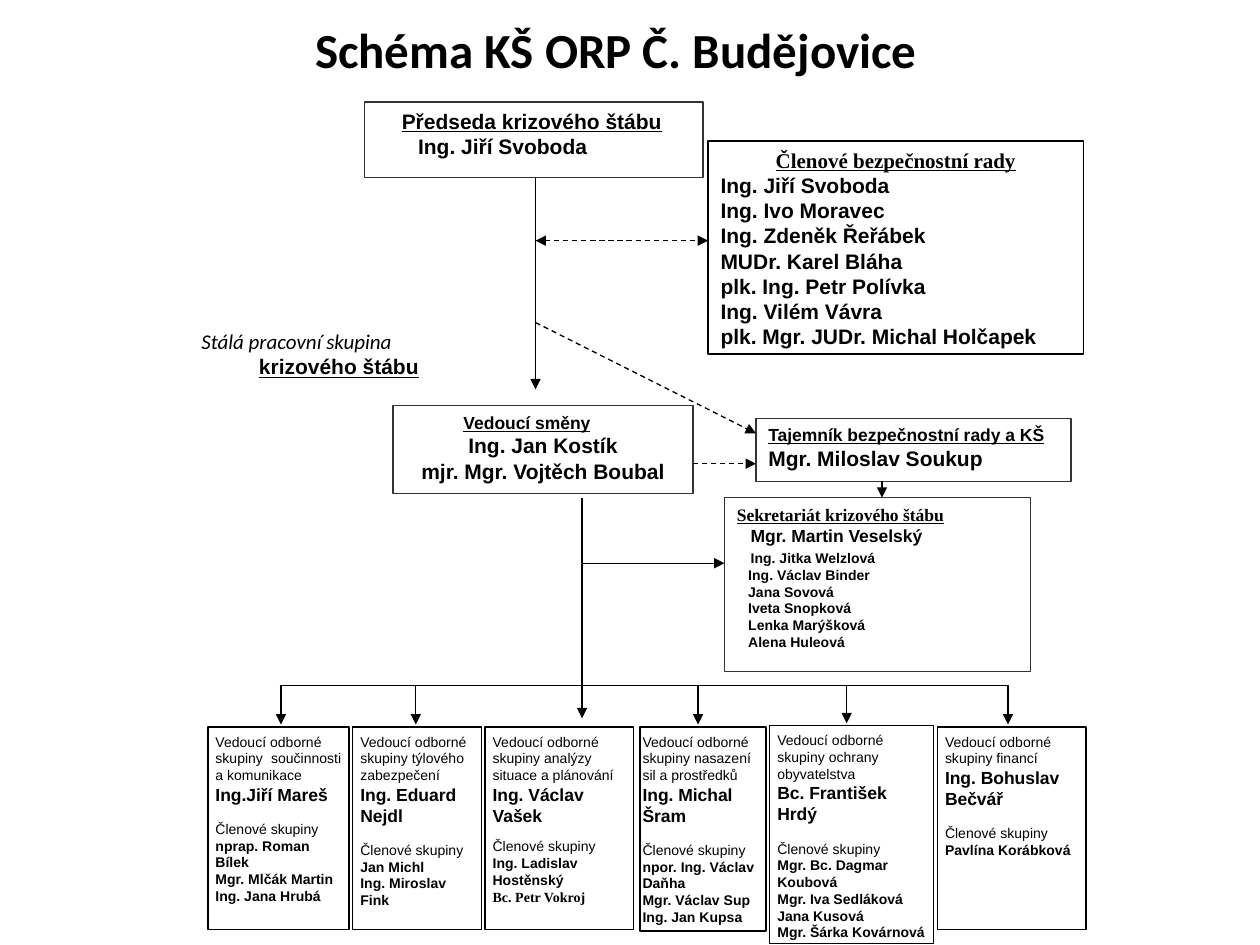
from dataclasses import dataclass

from lxml.etree import SubElement
from pptx import Presentation
from pptx.dml.color import RGBColor
from pptx.enum.dml import MSO_LINE
from pptx.enum.shapes import MSO_CONNECTOR, MSO_SHAPE
from pptx.enum.text import MSO_ANCHOR, MSO_AUTO_SIZE, PP_ALIGN
from pptx.oxml.ns import qn
from pptx.util import Inches, Pt

BLACK = RGBColor(0, 0, 0)
GRAY = RGBColor(0x33, 0x33, 0x33)
SERIF = "Times New Roman"
CENTER, JUSTIFY = PP_ALIGN.CENTER, PP_ALIGN.JUSTIFY


@dataclass
class Box:
    """Area in inches on the 10 x 7.5 slide."""
    left: float
    top: float
    width: float
    height: float

    @property
    def right(self):
        return self.left + self.width

    @property
    def bottom(self):
        return self.top + self.height

    @property
    def center(self):
        return self.left + self.width / 2

    def lengths(self):
        return [Inches(n) for n in (self.left, self.top, self.width, self.height)]


@dataclass
class Line:
    """One paragraph with its look."""
    text: str
    size: float = 12
    bold: bool = True
    underline: bool = False
    italic: bool = False
    font: str = "Arial"
    align: PP_ALIGN = PP_ALIGN.LEFT
    indent: float = 0
    before: float = 0


def write(frame, lines, side=0.1):
    frame.word_wrap = True
    frame.auto_size = MSO_AUTO_SIZE.NONE
    frame.vertical_anchor = MSO_ANCHOR.TOP
    frame.margin_left = frame.margin_right = Inches(side)
    frame.margin_top = frame.margin_bottom = Inches(0.05)
    for number, line in enumerate(lines):
        paragraph = frame.add_paragraph() if number else frame.paragraphs[0]
        paragraph.text = line.text
        paragraph.alignment = line.align
        if line.indent:
            paragraph._p.get_or_add_pPr().set("marL", str(Inches(line.indent)))
        if line.before:
            paragraph.space_before = Pt(line.before)
        font = paragraph.font
        font.name, font.size, font.bold = line.font, Pt(line.size), line.bold
        font.underline, font.italic = line.underline, line.italic
        font.color.rgb = BLACK


def org_box(slide, box, lines, border=BLACK, side=0.1):
    frame = slide.shapes.add_shape(MSO_SHAPE.RECTANGLE, *box.lengths())
    frame.shadow.inherit = False
    frame.fill.background()
    frame.line.color.rgb = border
    frame.line.width = Pt(0.75)
    write(frame.text_frame, lines, side)


def link(slide, start, end, dashed=False, ends=("tailEnd",)):
    connector = slide.shapes.add_connector(
        MSO_CONNECTOR.STRAIGHT, *[Inches(n) for n in (*start, *end)])
    connector.line.color.rgb = BLACK
    connector.line.width = Pt(0.75)
    if dashed:
        connector.line.dash_style = MSO_LINE.DASH
    properties = connector._element.spPr
    for arrow in ends:
        SubElement(properties.find(qn("a:ln")), qn(f"a:{arrow}"), type="triangle")
    SubElement(properties, qn("a:effectLst"))


def title(slide, box):
    heading = slide.shapes.title
    heading.left, heading.top, heading.width, heading.height = box.lengths()
    write(heading.text_frame, [Line("Schéma KŠ ORP Č. Budějovice", 28, font="Calibri")])
    heading.text_frame.vertical_anchor = MSO_ANCHOR.MIDDLE


def leadership(slide, chair, council, shift, caption):
    """Chair of the staff, security council and shift leader."""
    org_box(slide, chair, [
        Line("Předseda krizového štábu", underline=True, indent=0.2),
        Line("Ing. Jiří Svoboda", indent=0.33)], GRAY)
    members = ["Ing. Jiří Svoboda", "Ing. Ivo Moravec", "Ing. Zdeněk Řeřábek",
               "MUDr. Karel Bláha", "plk. Ing. Petr Polívka", "Ing. Vilém Vávra",
               "plk. Mgr. JUDr. Michal Holčapek"]
    org_box(slide, council, [
        Line("Členové bezpečnostní rady", underline=True, font=SERIF, align=CENTER),
        *map(Line, members)])
    org_box(slide, shift, [
        Line("Vedoucí směny", 10, underline=True, indent=0.46),
        Line("Ing. Jan Kostík", align=CENTER),
        Line("mjr. Mgr. Vojtěch Boubal", align=CENTER)], GRAY)
    label = slide.shapes.add_textbox(*caption.lengths())
    write(label.text_frame, [
        Line("Stálá pracovní skupina", bold=False, italic=True, font="Calibri"),
        Line("krizového štábu", underline=True, align=CENTER)])


def secretariat(slide, secretary, office):
    org_box(slide, secretary, [
        Line("Tajemník bezpečnostní rady a KŠ", 10, underline=True),
        Line("Mgr. Miloslav Soukup")], GRAY)
    staff = ["Ing. Václav Binder", "Jana Sovová", "Iveta Snopková",
             "Lenka Marýšková", "Alena Huleová"]
    org_box(slide, office, [
        Line("Sekretariát krizového štábu", 10, underline=True, font=SERIF),
        Line("Mgr. Martin Veselský", 10, indent=0.11),
        Line("Ing. Jitka Welzlová", 8, indent=0.11, before=2),
        *[Line(name, 8, indent=0.09) for name in staff]], GRAY)


def links(slide, chair, council, shift, secretary, office):
    trunk = 4.25
    link(slide, (trunk, chair.bottom), (trunk, 3.09))
    link(slide, (trunk, 1.91), (council.left, 1.91), True, ("headEnd", "tailEnd"))
    link(slide, (trunk, 2.56), (secretary.left, 3.44), True)
    link(slide, (shift.right, 3.68), (secretary.left, 3.68), True)
    link(slide, (7, secretary.bottom), (7, office.top))
    link(slide, (4.62, office.top), (4.62, 5.7))
    link(slide, (4.62, 4.47), (office.left, 4.47))


# Left, top, width, height, side margin, arrow x, role, leader, members
GROUPS = [
    (1.65, 5.77, 1.12, 1.61, 0.06, 2.23, ["skupiny součinnosti a komunikace"],
     "Ing.Jiří Mareš", ["nprap. Roman Bílek", "Mgr. Mlčák Martin", "Ing. Jana Hrubá"]),
    (2.8, 5.77, 1.02, 1.61, 0.06, 3.3, ["skupiny týlového", "zabezpečení"],
     "Ing. Eduard Nejdl", ["Jan Michl", "Ing. Miroslav Fink"]),
    (3.85, 5.77, 1.18, 1.61, 0.06, None, ["skupiny analýzy", "situace a plánování"],
     "Ing. Václav Vašek", ["Ing. Ladislav Hostěnský", "Bc. Petr Vokroj"]),
    (5.08, 5.77, 1, 1.62, 0.02, 5.54, ["skupiny nasazení", "sil a prostředků"],
     "Ing. Michal Šram", ["npor. Ing. Václav Daňha", "Mgr. Václav Sup", "Ing. Jan Kupsa"]),
    (6.11, 5.76, 1.3, 1.73, 0.06, 6.72, ["skupiny ochrany", "obyvatelstva"],
     "Bc. František Hrdý", ["Mgr. Bc. Dagmar Koubová", "Mgr. Iva Sedláková",
                            "Jana Kusová", "Mgr. Šárka Kovárnová"]),
    (7.44, 5.77, 1.18, 1.61, 0.06, 8, ["skupiny financí"],
     "Ing. Bohuslav Bečvář", ["Pavlína Korábková"]),
]


def expert_groups(slide, rail):
    """Row of expert groups hanging from a horizontal rail."""
    link(slide, (2.22, rail), (8, rail), ends=())
    for left, top, width, height, side, arrow, role, leader, members in GROUPS:
        roles = [Line(text, 8, False, align=JUSTIFY if len(role) == 1 else PP_ALIGN.LEFT)
                 for text in role]
        names = [Line(name, 8, font=SERIF if name == "Bc. Petr Vokroj" else "Arial")
                 for name in members]
        org_box(slide, Box(left, top, width, height), [
            Line("Vedoucí odborné", 8, False), *roles, Line(leader, 10),
            Line("Členové skupiny", 8, False, before=9 if arrow else 7), *names], side=side)
        if arrow:
            link(slide, (arrow, rail), (arrow, top - 0.02))


def main():
    deck = Presentation()
    deck.slide_width, deck.slide_height = Inches(10), Inches(7.5)
    slide = deck.slides.add_slide(deck.slide_layouts[5])
    chair = Box(2.89, 0.81, 2.69, 0.6)
    council = Box(5.62, 1.12, 2.98, 1.69)
    shift = Box(3.12, 3.22, 2.38, 0.7)
    secretary = Box(6, 3.32, 2.5, 0.5)
    office = Box(5.75, 3.95, 2.43, 1.38)
    title(slide, Box(2.4, 0.13, 5.2, 0.52))
    leadership(slide, chair, council, shift, Box(1.5, 2.56, 2.38, 0.5))
    secretariat(slide, secretary, office)
    links(slide, chair, council, shift, secretary, office)
    expert_groups(slide, rail=5.44)
    deck.save("out.pptx")


if __name__ == "__main__":
    main()
